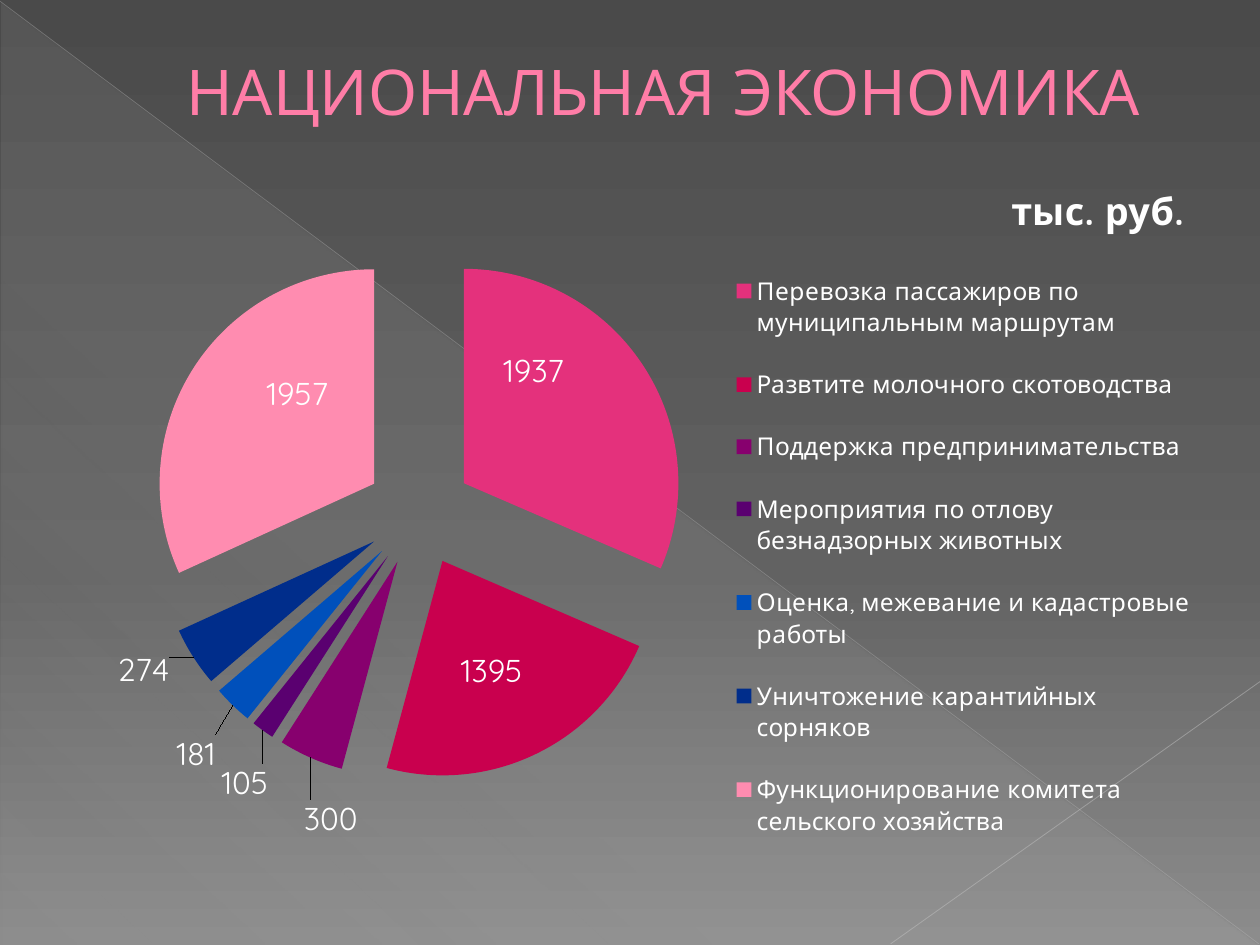
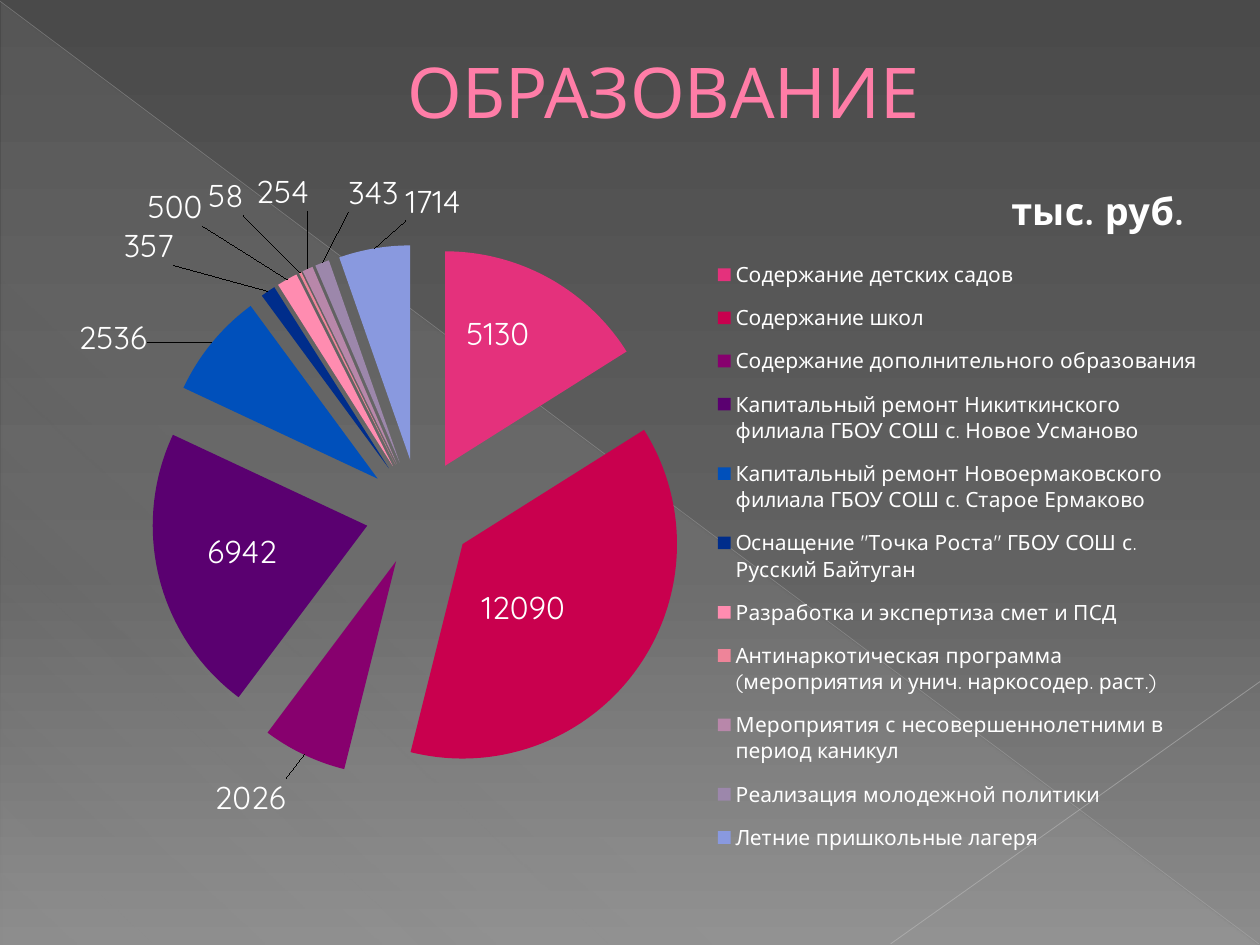
from math import cos, pi, sin

from lxml import etree
from pptx import Presentation
from pptx.chart.data import CategoryChartData
from pptx.dml.color import RGBColor
from pptx.enum.chart import XL_CHART_TYPE as ChartType
from pptx.enum.chart import XL_LABEL_POSITION as LabelPosition
from pptx.enum.chart import XL_LEGEND_POSITION as LegendPosition
from pptx.enum.shapes import MSO_CONNECTOR as Connector
from pptx.enum.shapes import MSO_SHAPE as Shape
from pptx.enum.text import MSO_ANCHOR as Anchor
from pptx.enum.text import PP_ALIGN as Align
from pptx.oxml.ns import qn
from pptx.util import Pt

FONT = "Quicksand"
COLORS = {
    "top": "4A4A4A", "middle": "626262", "bottom": "8C8C8C",
    "veil": "D2D2D2", "diagonal": "BFBFBF", "corner": "C6C6C6",
    "title": "FF7DA7", "text": "FFFFFF",
}
SLICES = {
    "pink": "E4317C", "crimson": "C9004E", "plum": "87006E",
    "violet": "5A0070", "blue": "0050BB", "navy": "002D8B",
    "light pink": "FF8CB0", "salmon": "EE8499", "mauve": "B887AA",
    "lilac": "9C87AB", "periwinkle": "8999DF",
}
CHART_BOX = (25.5, 94.3, 668.9, 414)
PLOT = (0, 0.11, 0.64, 0.74)
EXPLOSION = 25
LABEL_REACH = 0.6

ECONOMY = [
    ("Перевозка пассажиров по муниципальным маршрутам", 1937, (305, 212)),
    ("Развтите молочного скотоводства", 1395, (281, 383.5)),
    ("Поддержка предпринимательства", 300, (189, 468)),
    ("Мероприятия по отлову безнадзорных животных", 105, (140, 447.5)),
    ("Оценка, межевание и кадастровые работы", 181, (112, 431)),
    ("Уничтожение карантийных сорняков", 274, (82, 383)),
    ("Функционирование комитета сельского хозяйства", 1957, (170, 225)),
]
EDUCATION = [
    ("Содержание детских садов", 5130, (284.5, 190.5)),
    ("Содержание школ", 12090, (299, 347.5)),
    ("Содержание дополнительного образования", 2026, (143, 456)),
    ("Капитальный ремонт Никиткинского филиала ГБОУ СОШ с. Новое Усманово",
     6942, (138.5, 315.5)),
    ("Капитальный ремонт Новоермаковского филиала ГБОУ СОШ с. Старое Ермаково",
     2536, (64.5, 193)),
    ('Оснащение "Точка Роста" ГБОУ СОШ с. Русский Байтуган', 357, (85, 140.5)),
    ("Разработка и экспертиза смет и ПСД", 500, (100, 118)),
    ("Антинаркотическая программа (мероприятия и унич. наркосодер. раст.)",
     58, (129, 112)),
    ("Мероприятия с несовершеннолетними в период каникул", 254, (161.5, 109.5)),
    ("Реализация молодежной политики", 343, (213.5, 110)),
    ("Летние пришкольные лагеря", 1714, (247.5, 115)),
]


def rgb(name):
    """Return the named palette colour."""
    return RGBColor.from_string(COLORS[name])


def add_child(parent, tag, **attributes):
    """Append a child element with the given attributes."""
    child = etree.SubElement(parent, qn(tag))
    for name, value in attributes.items():
        child.set(name, str(value))
    return child


def add_alpha(color_element, percent):
    """Make a colour partly transparent."""
    add_child(color_element, "a:alpha", val=percent * 1000)


def set_gradient(fill, element, angle, stops):
    """Fill with stops of position, colour name and opacity."""
    fill.gradient()
    fill.gradient_angle = angle
    stop_list = element.xpath(".//a:gsLst")[0]
    for stop in list(stop_list):
        stop_list.remove(stop)
    for position, name, opacity in stops:
        stop = add_child(stop_list, "a:gs", pos=position * 1000)
        add_alpha(add_child(stop, "a:srgbClr", val=COLORS[name]), opacity)


def add_thin_line(slide, start, end, color, width, opacity):
    """Draw a translucent background line."""
    line = slide.shapes.add_connector(
        Connector.STRAIGHT, *(Pt(value) for value in (*start, *end)))
    line.line.color.rgb = rgb(color)
    line.line.width = Pt(width)
    properties = line._element.spPr
    add_alpha(properties.xpath(".//a:srgbClr")[0], opacity)
    add_child(properties, "a:effectLst")


def add_backdrop(slide):
    """Draw the gradient, the pale triangle and the crossing lines."""
    set_gradient(slide.background.fill, slide._element, 270,
                 [(0, "top", 100), (60, "middle", 100), (100, "bottom", 100)])
    triangle = slide.shapes.add_shape(
        Shape.RIGHT_TRIANGLE, Pt(0.7), Pt(1.4), Pt(718.6), Pt(538.6))
    triangle.shadow.inherit = False
    triangle.line.fill.background()
    set_gradient(triangle.fill, triangle._element, 227,
                 [(0, "veil", 10), (70, "veil", 8), (100, "veil", 1)])
    add_thin_line(slide, (0, 0.7), (719.3, 539.3), "diagonal", 0.39, 35)
    add_thin_line(slide, (720, 389.5), (509, 539.3), "corner", 0.47, 45)


def add_title(slide, text, size):
    """Write the centred slide title."""
    box = slide.shapes.add_textbox(Pt(36), Pt(20.7), Pt(648), Pt(62))
    frame = box.text_frame
    frame.word_wrap = True
    frame.vertical_anchor = Anchor.MIDDLE
    frame.margin_left = Pt(45.4)
    paragraph = frame.paragraphs[0]
    paragraph.text = text
    paragraph.alignment = Align.CENTER
    set_font(paragraph.font, size, "title")


def set_font(font, size, color="text", bold=False):
    """Set the shared typeface with a size and a colour."""
    font.name = FONT
    font.size = Pt(size)
    font.bold = bold
    font.color.rgb = rgb(color)


def set_layout(parent, index, position, edge=False, inner=False):
    """Place a chart part by fractions of the chart area."""
    for old in parent.findall(qn("c:layout")):
        parent.remove(old)
    layout = etree.Element(qn("c:layout"))
    parent.insert(index, layout)
    manual = add_child(layout, "c:manualLayout")
    if inner:
        add_child(manual, "c:layoutTarget", val="inner")
    if edge:
        add_child(manual, "c:xMode", val="edge")
        add_child(manual, "c:yMode", val="edge")
    for name, value in zip("xywh", position):
        add_child(manual, f"c:{name}", val=round(value, 4))


def label_offsets(items):
    """Yield each label's shift from the middle of its slice."""
    left, top, width, height = CHART_BOX
    center_x = left + width * (PLOT[0] + PLOT[2] / 2)
    center_y = top + height * (PLOT[1] + PLOT[3] / 2)
    reach = LABEL_REACH * height * PLOT[3] / 2
    total = sum(value for _, value, _ in items)
    passed = 0
    for _, value, (x, y) in items:
        angle = 2 * pi * (passed + value / 2) / total
        passed += value
        yield ((x - center_x - reach * sin(angle)) / width,
               (y - center_y + reach * cos(angle)) / height)


def style_slices(series, items):
    """Colour and pull apart the slices, and place their labels."""
    labels = series.data_labels
    labels.show_value = True
    labels.position = LabelPosition.CENTER
    set_font(labels.font, 18)
    for index, (color, offset) in enumerate(
            zip(SLICES.values(), label_offsets(items))):
        point = series.points[index]
        point.format.fill.solid()
        point.format.fill.fore_color.rgb = RGBColor.from_string(color)
        point.format.line.fill.background()
        point.data_label.position = LabelPosition.CENTER
        set_font(point.data_label.font, 18)
        label = series._element.xpath(f".//c:dLbl[c:idx/@val='{index}']")[0]
        set_layout(label, 1, offset)
    explosion = etree.Element(qn("c:explosion"))
    explosion.set("val", str(EXPLOSION))
    series._element.xpath("c:dPt")[0].addprevious(explosion)


def add_pie(slide, items, legend_size, legend_place):
    """Add the exploded pie with its unit title and legend."""
    data = CategoryChartData()
    data.categories = [name for name, _, _ in items]
    data.add_series("Series 1", [value for _, value, _ in items])
    chart = slide.shapes.add_chart(
        ChartType.PIE, *(Pt(value) for value in CHART_BOX), data).chart
    set_font(chart.font, 18)

    chart.has_title = True
    paragraph = chart.chart_title.text_frame.paragraphs[0]
    paragraph.text = "тыс. руб."
    set_font(paragraph.font, 21.6, bold=True)
    set_layout(chart.chart_title._element, 1, (0.82, 6 / CHART_BOX[3]),
               edge=True)

    chart.has_legend = True
    chart.legend.position = LegendPosition.RIGHT
    chart.legend.include_in_layout = False
    set_font(chart.legend.font, legend_size)
    set_layout(chart.legend._element, 1, legend_place, edge=True)

    plot = chart.plots[0]
    plot.vary_by_categories = True
    set_layout(chart._chartSpace.xpath(".//c:plotArea")[0], 0, PLOT,
               edge=True, inner=True)
    style_slices(plot.series[0], items)


def add_budget_slide(presentation, title, title_size, items,
                     legend_size, legend_place):
    """Add one slide with a budget breakdown."""
    slide = presentation.slides.add_slide(presentation.slide_layouts[6])
    add_backdrop(slide)
    add_title(slide, title, title_size)
    add_pie(slide, items, legend_size, legend_place)


def main():
    """Build and save the presentation."""
    presentation = Presentation()
    presentation.slide_width = Pt(720)
    presentation.slide_height = Pt(540)
    add_budget_slide(presentation, "НАЦИОНАЛЬНАЯ ЭКОНОМИКА", 36, ECONOMY,
                     14, (0.58, 0.11, 0.41, 0.86))
    add_budget_slide(presentation, "ОБРАЗОВАНИЕ", 40, EDUCATION,
                     12, (0.57, 0.11, 0.42, 0.86))
    presentation.save("out.pptx")


if __name__ == "__main__":
    main()
